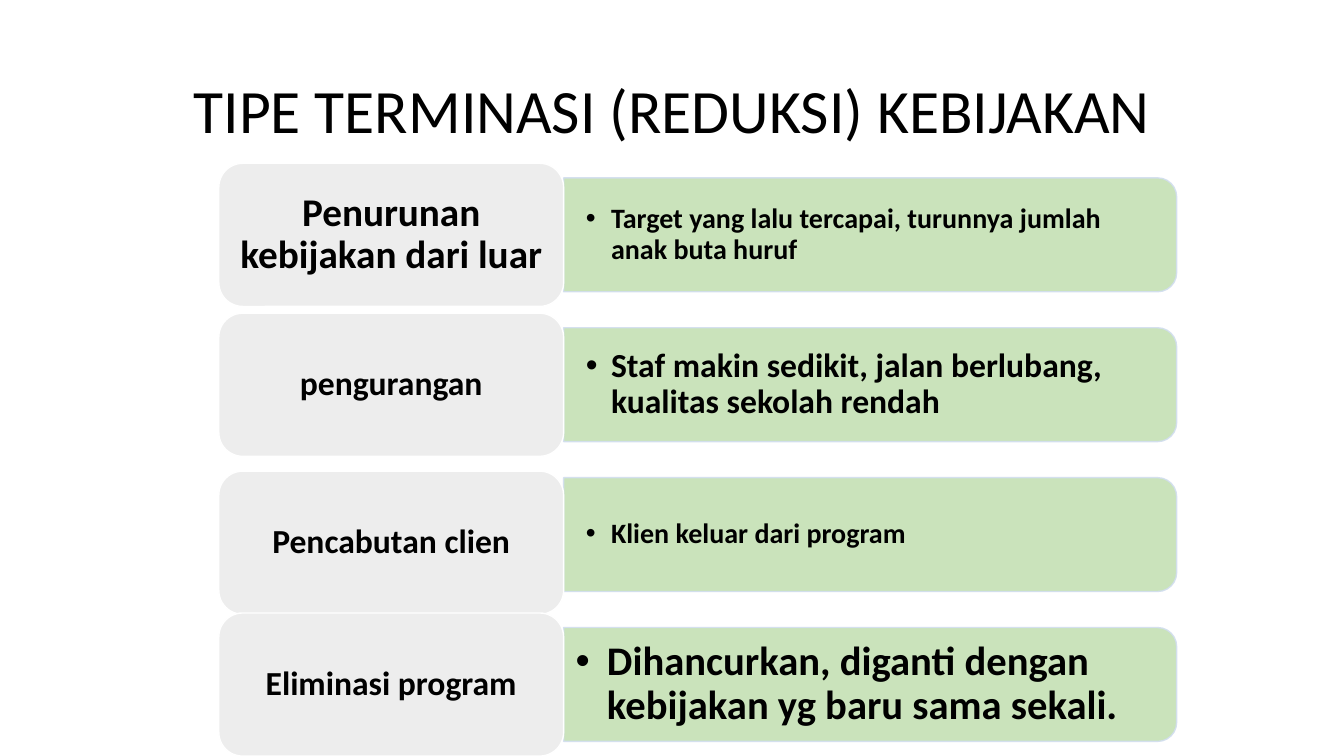
from lxml import etree
from pptx import Presentation
from pptx.dml.color import RGBColor
from pptx.enum.shapes import MSO_SHAPE
from pptx.enum.text import MSO_ANCHOR, PP_ALIGN
from pptx.oxml.ns import qn
from pptx.util import Inches, Pt

LABEL_SHAPE = MSO_SHAPE.ROUNDED_RECTANGLE
PANEL_SHAPE = MSO_SHAPE.ROUND_2_SAME_RECTANGLE
MIDDLE = MSO_ANCHOR.MIDDLE
CENTER = PP_ALIGN.CENTER
LEFT = PP_ALIGN.LEFT

FONT = "Calibri"
FIRST_ROW, ROW_PITCH, ROW_HEIGHT = 1.62, 1.487, 1.42
LABEL_LEFT, LABEL_WIDTH = 2.17, 3.42
PANEL_LEFT, PANEL_WIDTH, PANEL_HEIGHT = LABEL_LEFT + LABEL_WIDTH, 6.08, 1.13
DETAIL_WIDTH, DETAIL_HEIGHT = 6.02, 1.02
WIDE, NARROW = (0.22, 0.11), (0.12, 0.06)

# label, label size, label shift down, detail, detail size, detail indent, detail insets
ROWS = [
    ("Penurunan kebijakan dari luar", 28, 0,
     "Target yang lalu tercapai, turunnya jumlah anak buta huruf", 20, 0.25, WIDE),
    ("pengurangan", 24, 0,
     "Staf makin sedikit, jalan berlubang, kualitas sekolah rendah", 24, 0.25, WIDE),
    ("Pencabutan clien", 24, 0.08,
     "Klien keluar dari program", 20, 0.25, WIDE),
    ("Eliminasi program", 24, 0,
     "Dihancurkan, diganti dengan kebijakan yg baru sama sekali.", 29, 0.31, NARROW),
]


def color(value):
    return RGBColor.from_string(value)


def write(box, text, size, bold=True, align=CENTER, insets=NARROW):
    frame = box.text_frame
    frame.word_wrap = True
    frame.vertical_anchor = MIDDLE
    frame.margin_left = frame.margin_right = Inches(insets[0])
    frame.margin_top = frame.margin_bottom = Inches(insets[1])
    frame.text = text
    para = frame.paragraphs[0]
    para.alignment = align
    para.line_spacing = 0.9
    font = para.runs[0].font
    font.name, font.size, font.bold = FONT, Pt(size), bold
    font.color.rgb = color("000000")
    return para


def add_text(page, left, top, width, height, text, size, **style):
    box = page.shapes.add_textbox(*map(Inches, (left, top, width, height)))
    return write(box, text, size, **style)


def add_block(page, kind, left, top, width, height, fill, line):
    block = page.shapes.add_shape(kind, *map(Inches, (left, top, width, height)))
    block.shadow.inherit = False
    block.fill.solid()
    block.fill.fore_color.rgb = color(fill)
    block.line.color.rgb = color(line)
    block.line.width = Pt(1)
    return block


def set_bullet(para, indent):
    properties = para._p.get_or_add_pPr()
    properties.set("marL", str(Inches(indent)))
    properties.set("indent", str(-Inches(indent)))
    etree.SubElement(properties, qn("a:buFont")).set("typeface", "Arial")
    etree.SubElement(properties, qn("a:buChar")).set("char", "•")


def add_panel(page, middle):
    """Draw the green panel as an upright shape turned a quarter to the right."""
    center = PANEL_LEFT + PANEL_WIDTH / 2
    panel = add_block(page, PANEL_SHAPE, center - PANEL_HEIGHT / 2, middle - PANEL_WIDTH / 2,
                      PANEL_HEIGHT, PANEL_WIDTH, "C5E0B4", "D2DEEF")
    panel.rotation = 90
    for tint in panel._element.spPr.iter(qn("a:srgbClr")):
        etree.SubElement(tint, qn("a:alpha")).set("val", "90000")


def add_row(page, top, label, label_size, shift, detail, detail_size, indent, insets):
    middle = top + ROW_HEIGHT / 2
    add_panel(page, middle)
    para = add_text(page, PANEL_LEFT, middle - DETAIL_HEIGHT / 2, DETAIL_WIDTH, DETAIL_HEIGHT,
                    detail, detail_size, align=LEFT, insets=insets)
    set_bullet(para, indent)
    block = add_block(page, LABEL_SHAPE, LABEL_LEFT, top + shift, LABEL_WIDTH, ROW_HEIGHT,
                      "EDEDED", "FFFFFF")
    write(block, label, label_size)


def main():
    deck = Presentation()
    deck.slide_width, deck.slide_height = Inches(13.33), Inches(7.5)
    page = deck.slides.add_slide(deck.slide_layouts[6])
    for index, row in enumerate(ROWS):
        add_row(page, FIRST_ROW + index * ROW_PITCH, *row)
    add_text(page, 0.92, 0.4, 11.5, 1.45, "TIPE TERMINASI (REDUKSI) KEBIJAKAN", 44, bold=False)
    deck.save("out.pptx")


if __name__ == "__main__":
    main()
